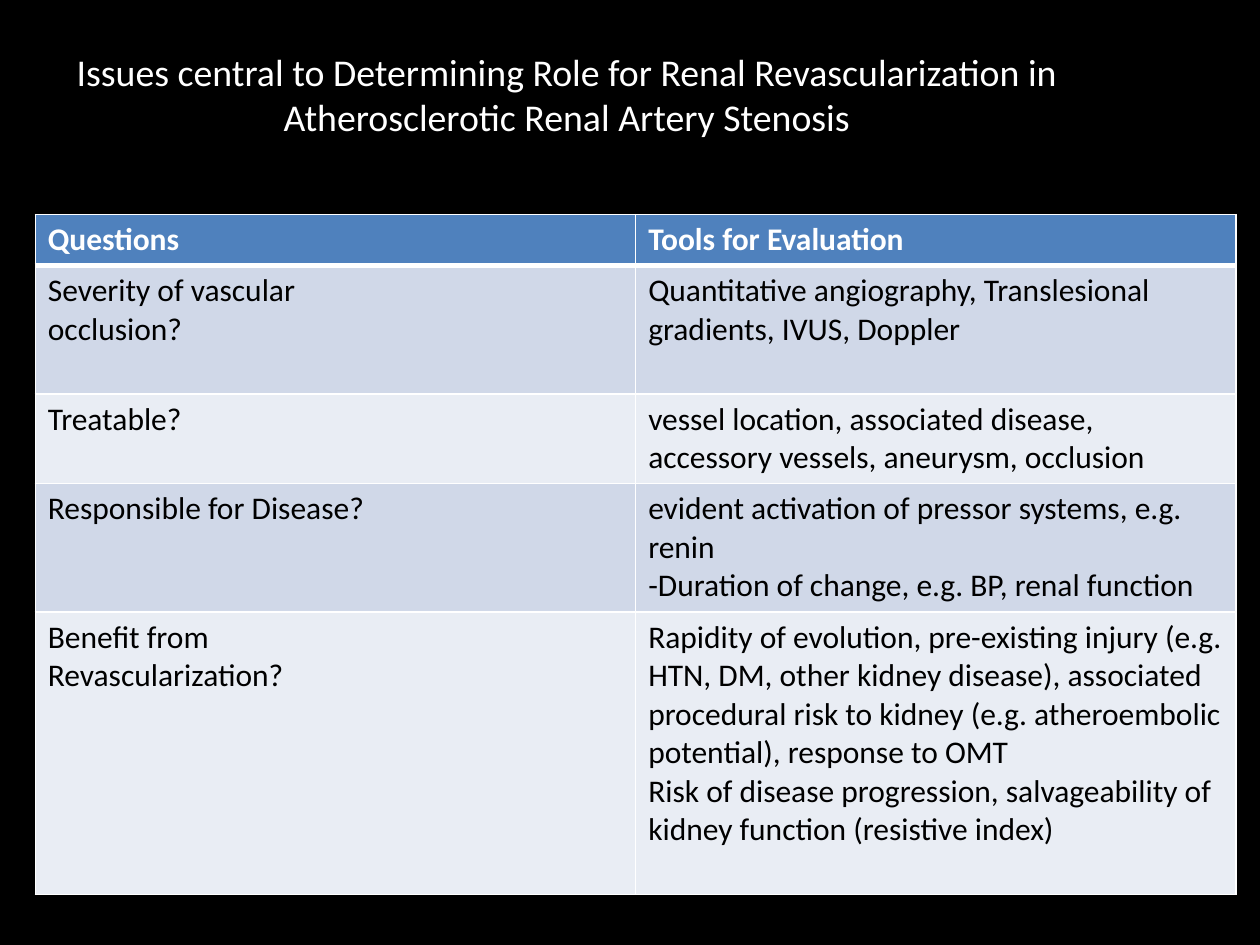
from lxml import etree
from pptx import Presentation
from pptx.dml.color import RGBColor
from pptx.enum.text import MSO_ANCHOR, MSO_AUTO_SIZE, PP_ALIGN
from pptx.oxml.ns import qn
from pptx.util import Inches, Pt

CENTER = PP_ALIGN.CENTER
MIDDLE = MSO_ANCHOR.MIDDLE
NO_AUTOFIT = MSO_AUTO_SIZE.NONE
WIDTH, HEIGHT = Inches(10), Inches(7.5)
WHITE, BLACK, BLUE = "FFFFFF", "000000", "4F81BD"
BANDS = ("D0D8E8", "E9EDF4")

TITLE = ("Issues central to Determining Role for Renal Revascularization in "
         "Atherosclerotic Renal Artery Stenosis")
ROWS = [
    (["Questions"], ["Tools for Evaluation"]),
    (["Severity of vascular", "occlusion?"],
     ["Quantitative angiography, Translesional gradients, IVUS, Doppler"]),
    (["Treatable?"],
     ["vessel location, associated disease, accessory vessels, aneurysm, occlusion"]),
    (["Responsible for Disease?"],
     ["evident activation of pressor systems, e.g. renin",
      "-Duration of change, e.g. BP, renal function"]),
    (["Benefit from", "Revascularization?"],
     ["Rapidity of evolution, pre-existing injury (e.g. HTN, DM, other kidney disease), associated",
      "procedural risk to kidney (e.g. atheroembolic potential), response to OMT",
      "Risk of disease progression, salvageability of kidney function (resistive index)"]),
]
ROW_HEIGHTS = [0.4, 1.02, 0.71, 1.02, 2.24]


def rgb(value):
    """Turn a hex string into a colour."""
    return RGBColor.from_string(value)


class SlideBuilder:
    """Holds the style and the current slide."""

    def __init__(self, slide, font="Calibri", title_size=21.6, body_size=18):
        """Store the style and paint the background."""
        self.slide, self.font = slide, font
        self.title_size, self.body_size = title_size, body_size
        slide.background.fill.solid()
        slide.background.fill.fore_color.rgb = rgb(BLACK)

    def box(self, left, top, width, height):
        """Turn shares of the slide into lengths."""
        return (round(left * WIDTH), round(top * HEIGHT),
                round(width * WIDTH), round(height * HEIGHT))

    def add_lines(self, frame, lines, size, color, bold=False, align=None):
        """Add each line as one paragraph with one run."""
        for index, line in enumerate(lines):
            paragraph = frame.add_paragraph() if index else frame.paragraphs[0]
            paragraph.alignment = align
            run = paragraph.add_run()
            run.text = line
            run.font.name, run.font.size, run.font.bold = self.font, Pt(size), bold
            run.font.color.rgb = rgb(color)

    def title(self, wording, *place):
        """Place and fill the title placeholder."""
        heading = self.slide.shapes.title
        heading.left, heading.top, heading.width, heading.height = self.box(*place)
        frame = heading.text_frame
        frame.word_wrap, frame.auto_size = True, NO_AUTOFIT
        frame.vertical_anchor, frame.margin_bottom = MIDDLE, Inches(0.41)
        self.add_lines(frame, [wording], self.title_size, WHITE, align=CENTER)

    def border(self, cell, side, points):
        """Draw a white border on one side of a cell."""
        line = etree.SubElement(cell._tc.get_or_add_tcPr(), qn(f"a:ln{side}"),
                                w=str(Pt(points)))
        fill = etree.SubElement(line, qn("a:solidFill"))
        etree.SubElement(fill, qn("a:srgbClr"), val=WHITE)

    def table(self, rows, heights, *place):
        """Add a table with a header row and banded body rows."""
        grid = self.slide.shapes.add_table(len(rows), len(rows[0]), *self.box(*place)).table
        for r, (entries, height) in enumerate(zip(rows, heights)):
            grid.rows[r].height = Inches(height)
            header = r == 0
            edges = {"L": 1, "R": 1, "T": 3 if r == 1 else 1, "B": 3 if header else 1}
            for c, lines in enumerate(entries):
                cell = grid.cell(r, c)
                for side, points in edges.items():
                    self.border(cell, side, points)
                cell.fill.solid()
                cell.fill.fore_color.rgb = rgb(BLUE if header else BANDS[(r - 1) % 2])
                self.add_lines(cell.text_frame, lines, self.body_size,
                               WHITE if header else BLACK, bold=header)


def main():
    """Build and save the slide."""
    deck = Presentation()
    deck.slide_width, deck.slide_height = WIDTH, HEIGHT
    page = SlideBuilder(deck.slides.add_slide(deck.slide_layouts[5]))
    page.title(TITLE, 0, 0.04, 0.9, 1 / 6)
    page.table(ROWS, ROW_HEIGHTS, 0.028, 0.227, 0.953, sum(ROW_HEIGHTS) / 7.5)
    deck.save("out.pptx")


if __name__ == "__main__":
    main()
